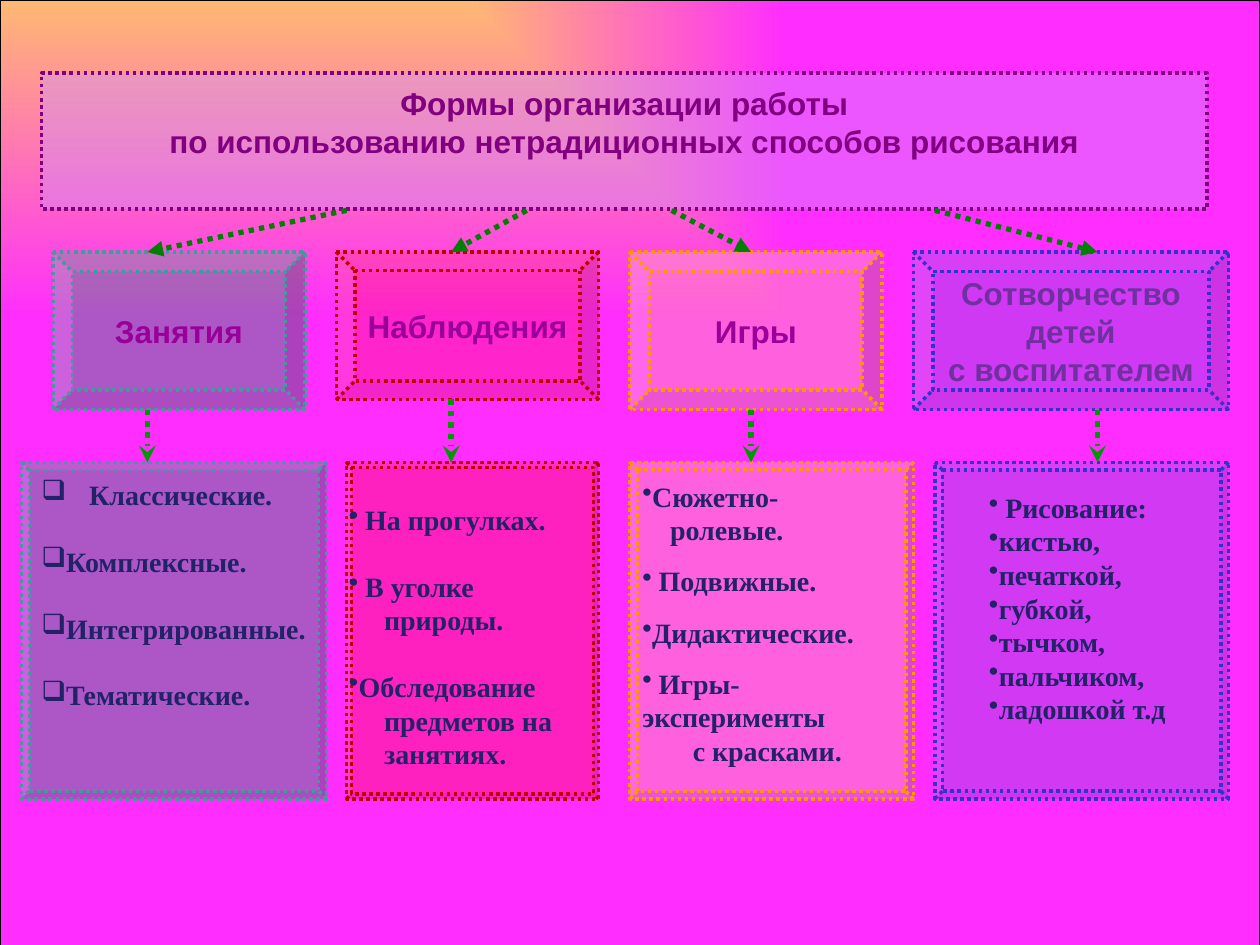
from dataclasses import dataclass

from lxml import etree
from pptx import Presentation
from pptx import util as u
from pptx.dml.color import RGBColor
from pptx.enum import dml, shapes, text
from pptx.oxml.ns import qn

Box = tuple[float, float, float, float]
Point = tuple[float, float]


@dataclass(frozen=True)
class Theme:
    head: str = "Arial"
    body: str = "Times New Roman"
    big: float = 18
    mid: float = 16
    title: str = "800080"
    label: str = "990099"
    dark: str = "7030A0"
    ink: str = "222268"
    veil: str = "CC99FF"
    link: str = "008000"
    drop: str = "009900"
    warm: str = "FFFF00"
    cool: str = "FF00FF"


@dataclass(frozen=True)
class Item:
    words: str
    mark: str = "•"
    left: float = 0
    hang: float = 0
    gap: float = 0


@dataclass(frozen=True)
class Column:
    name: str
    tile: Box
    panel: Box
    area: Box
    fill: str
    line: str
    tint: tuple[int, int]
    edge: float
    start: float
    axis: float
    items: list[Item]
    ink: str = Theme.label
    anchor: text.MSO_ANCHOR = text.MSO_ANCHOR.MIDDLE


T = Theme()
TOP, BASE, ROW, LOW = 1.67, 2, 3.67, 2.67
SKIP = 19

COLUMNS = [
    Column("Занятия", (0.42, BASE, 2, 1.25), (0.17, ROW, 2.42, LOW),
           (0.23, 3.74, 2.3, 2.54), "00B050", "4597A0", (32, 32), 0.026, 2.75, 1.17,
           [Item("Классические.", "❑", 0.38, 0.38),
            *(Item(word, "❑", gap=SKIP)
              for word in ("Комплексные.", "Интегрированные.", "Тематические."))],
           anchor=text.MSO_ANCHOR.TOP),
    Column("Наблюдения", (2.67, BASE, 2.08, 1.17), (2.75, ROW, 2, LOW),
           (2.67, 3.92, 1.92, 2.26), "FF0000", "C00000", (20, 25), 0.02, 4.18, 3.58,
           [Item("На прогулках.", left=0.13, hang=0.13),
            Item("В уголке", left=0.13, hang=0.13, gap=SKIP),
            Item("природы.", "", 0.28),
            Item("Обследование", gap=SKIP),
            Item("предметов на", "", 0.28),
            Item("занятиях.", "", 0.28)]),
    Column("Игры", (5, BASE, 2, 1.25), (5, ROW, 2.25, LOW),
           (5, 3.75, 2.17, 2.39), "FFCC99", "FF9900", (32, 32), 0.026, 5.33, 5.96,
           [Item("Сюжетно-"),
            Item("ролевые.", "", 0.22),
            Item("Подвижные.", left=0.13, hang=0.13, gap=10),
            Item("Дидактические.", gap=10),
            Item("Игры-", left=0.13, hang=0.13, gap=10),
            Item("эксперименты", ""),
            Item("с красками.", "", 0.4)]),
    Column("Сотворчество\nдетей\nс воспитателем", (7.25, BASE, 2.5, 1.25),
           (7.42, ROW, 2.33, LOW), (7.75, 3.83, 1.75, 1.99),
           "0070C0", "3333CC", (19, 18), 0.026, 7.42, 8.71,
           [Item("Рисование:", left=0.13, hang=0.13),
            *(Item(word) for word in ("кистью,", "печаткой,", "губкой,", "тычком,",
                                      "пальчиком,", "ладошкой т.д"))],
           ink=T.dark),
]


def rgb(code: str) -> RGBColor:
    return RGBColor.from_string(code)


def add(node, tag: str, **attrs: str):
    return etree.SubElement(node, qn(tag), **attrs)


def place(box: Box) -> list[u.Length]:
    return [u.Inches(side) for side in box]


def style(para, face: str, size: float, ink: str) -> None:
    font = para.font
    font.name, font.size, font.bold = face, u.Pt(size), True
    font.color.rgb = rgb(ink)


def paint(shape, fill: str, tint: int, line: str) -> None:
    """Give a translucent fill and a dotted outline."""
    shape.fill.solid()
    shape.fill.fore_color.rgb = rgb(fill)
    tone = shape.fill._xPr.find(qn("a:solidFill"))[0]
    add(tone, "a:alpha", val=str(tint * 1000))
    shape.line.color.rgb = rgb(line)
    shape.line.width = u.Pt(2)
    shape.line.dash_style = dml.MSO_LINE.ROUND_DOT


def label(shape, words: str, ink: str) -> None:
    frame = shape.text_frame
    frame.text = words
    frame.word_wrap = False
    frame.auto_size = text.MSO_AUTO_SIZE.NONE
    frame.vertical_anchor = text.MSO_ANCHOR.MIDDLE
    for para in frame.paragraphs:
        para.alignment = text.PP_ALIGN.CENTER
        style(para, T.head, T.big, ink)


def bevel(slide, box: Box, edge: float, fill: str, tint: int, line: str):
    shape = slide.shapes.add_shape(shapes.MSO_SHAPE.BEVEL, *place(box))
    shape.adjustments[0] = edge
    shape.shadow.inherit = False
    paint(shape, fill, tint, line)
    return shape


def arrow(slide, start: Point, end: Point, ink: str, width: float, head: str) -> None:
    link = slide.shapes.add_connector(shapes.MSO_CONNECTOR.STRAIGHT, *place(start + end))
    link.line.color.rgb = rgb(ink)
    link.line.width = u.Pt(width)
    link.line.dash_style = dml.MSO_LINE.ROUND_DOT
    add(link.line._get_or_add_ln(), "a:tailEnd", type=head)
    add(link._element.spPr, "a:effectLst")


def bullets(slide, col: Column) -> None:
    frame = slide.shapes.add_textbox(*place(col.area)).text_frame
    frame.word_wrap = True
    frame.vertical_anchor = col.anchor
    if col.anchor == text.MSO_ANCHOR.TOP:
        frame.margin_right = 0
    for i, item in enumerate(col.items):
        para = frame.paragraphs[0] if i == 0 else frame.add_paragraph()
        para.text = item.words
        props = para._p.get_or_add_pPr()
        props.set("marL", str(u.Inches(item.left)))
        props.set("indent", str(-u.Inches(item.hang)))
        if item.mark:
            add(props, "a:buChar", char=item.mark)
        if item.gap:
            para.space_before = u.Pt(item.gap)
        style(para, T.body, T.mid, T.ink)


def backdrop(slide) -> None:
    """Cover the slide with a gradient that spreads from the top left corner."""
    shape = slide.shapes.add_shape(shapes.MSO_SHAPE.RECTANGLE, *place((0, 0, 10, 7.53)))
    shape.shadow.inherit = False
    shape.line.color.rgb = rgb("000000")
    shape.line.width = u.Pt(0.75)
    grad = etree.Element(qn("a:gradFill"), rotWithShape="1")
    stops = add(grad, "a:gsLst")
    for pos, tone, tint in ((0, T.warm, 81), (100, T.cool, 82)):
        stop = add(stops, "a:gs", pos=str(pos * 1000))
        add(add(stop, "a:srgbClr", val=tone), "a:alpha", val=str(tint * 1000))
    way = add(grad, "a:path", path="rect")
    add(way, "a:fillToRect", r="100000", b="100000")
    shape._element.spPr.insert(2, grad)


def banner(slide) -> None:
    """Turn the title placeholder into a bevel above the backdrop."""
    title = slide.shapes.title
    slide.shapes._spTree.append(title._element)
    title.left, title.top, title.width, title.height = place((0.33, 0.58, 9.25, 1.08))
    form = add(title._element.spPr, "a:prstGeom", prst="bevel")
    add(add(form, "a:avLst"), "a:gd", name="adj", fmla="val 12500")
    paint(title, T.veil, 39, T.title)
    label(title, "Формы организации работы\n"
          "по использованию нетрадиционных способов рисования", T.title)
    title.text_frame.margin_bottom = u.Inches(0.35)


def main() -> None:
    deck = Presentation()
    deck.slide_width, deck.slide_height = u.Inches(10), u.Inches(7.5)
    slide = deck.slides.add_slide(deck.slide_layouts[5])
    backdrop(slide)
    banner(slide)
    for col in COLUMNS:
        tile = bevel(slide, col.tile, 0.125, col.fill, col.tint[0], col.line)
        label(tile, col.name, col.ink)
        bevel(slide, col.panel, col.edge, col.fill, col.tint[1], col.line)
        foot = col.tile[1] + col.tile[3]
        arrow(slide, (col.start, TOP), (col.axis, BASE), T.link, 3, "triangle")
        arrow(slide, (col.axis, foot), (col.axis, ROW), T.drop, 3.25, "stealth")
        bullets(slide, col)
    deck.save("out.pptx")


if __name__ == "__main__":
    main()
